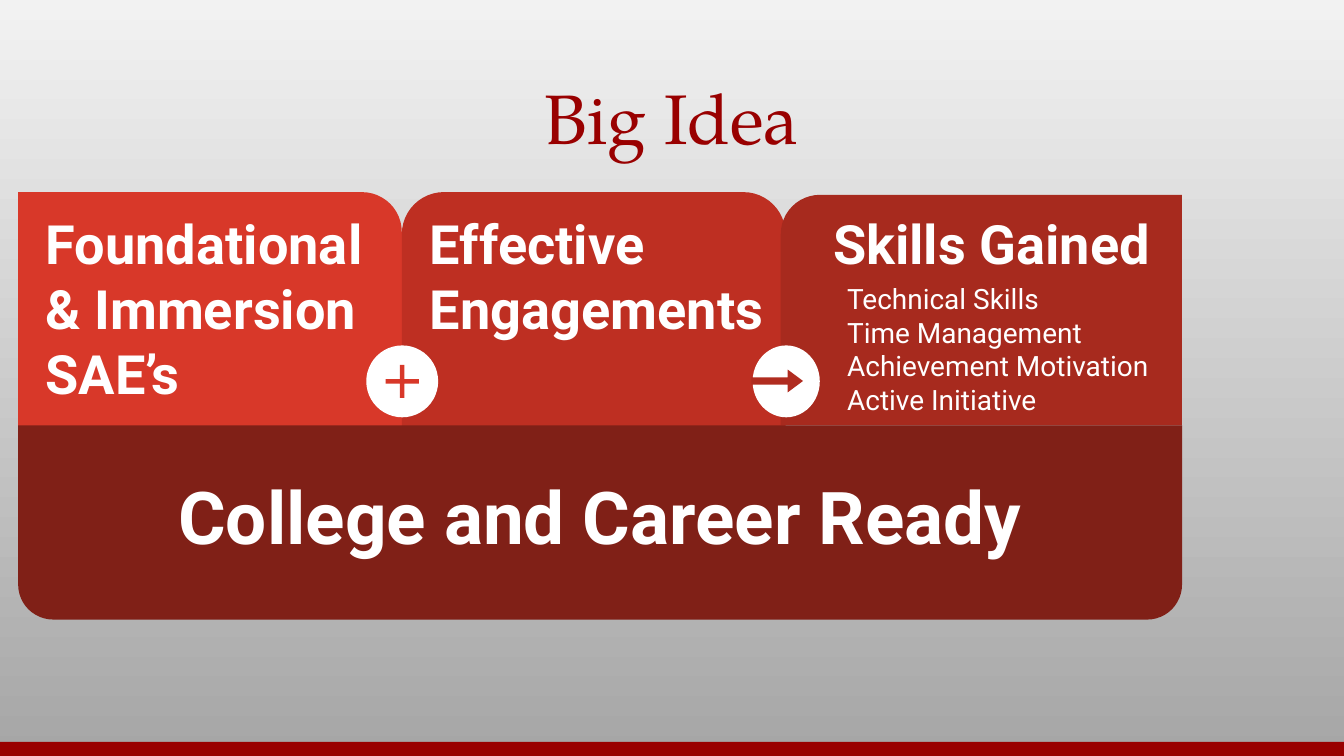
from typing import NamedTuple

from pptx import Presentation
from pptx import util as u
from pptx.dml.color import RGBColor
from pptx.enum import shapes, text

PX = 4572
WIDTH, HEIGHT = 2000, 1125
SANS, SERIF = "Roboto", "TeX Gyre Pagella"
WHITE = RGBColor(0xFF, 0xFF, 0xFF)
CRIMSON = RGBColor(0x99, 0x00, 0x00)
RED = RGBColor(0xD8, 0x38, 0x29)
BRICK = RGBColor(0xBE, 0x2F, 0x22)
RUST = RGBColor(0xA7, 0x2A, 0x1E)
ARROW = RGBColor(0xB0, 0x2C, 0x20)
MAROON = RGBColor(0x80, 0x20, 0x17)
SKY = RGBColor(0xF2, 0xF2, 0xF2)
GROUND = RGBColor(0xA6, 0xA6, 0xA6)
KIND = shapes.MSO_SHAPE


class Box(NamedTuple):
    x: int
    y: int
    w: int
    h: int


class Block(NamedTuple):
    kind: shapes.MSO_SHAPE
    box: Box
    fill: RGBColor
    adj: tuple[float, ...] = ()
    rotation: int = 0
    flip: bool = False


class Heading(NamedTuple):
    label: str
    box: Box


PANELS = [
    Block(KIND.RECTANGLE, Box(0, 1104, WIDTH, 21), CRIMSON),
    Block(KIND.ROUND_1_RECTANGLE, Box(27, 286, 571, 348), RED, (0.17,)),
    Block(KIND.ROUND_2_SAME_RECTANGLE, Box(598, 286, 571, 348), BRICK, (0.18, 0)),
    Block(KIND.ROUND_1_RECTANGLE, Box(1162, 290, 597, 343), RUST, (0.17,), flip=True),
    Block(KIND.ROUND_2_SAME_RECTANGLE, Box(27, 633, 1732, 289), MAROON, (0.18, 0), 180),
]
SYMBOLS = [
    Block(KIND.OVAL, Box(1120, 514, 100, 107), WHITE),
    Block(KIND.RIGHT_ARROW, Box(1118, 550, 77, 34), ARROW, (0.32, 0.67)),
    Block(KIND.OVAL, Box(545, 514, 107, 107), WHITE),
    Block(KIND.MATH_PLUS, Box(565, 534, 67, 67), RED, (0.1,)),
]
HEADINGS = [
    Heading("Foundational & Immersion SAE’s", Box(48, 293, 542, 416)),
    Heading("Effective Engagements", Box(620, 293, 542, 132)),
    Heading("Skills Gained", Box(1220, 293, 542, 132)),
]
SKILLS = ["Technical Skills", "Time Management", "Achievement Motivation", "Active Initiative"]


def emu(box: Box) -> list[int]:
    return [v * PX for v in box]


def draw_block(s, block: Block) -> None:
    sp = s.shapes.add_shape(block.kind, *emu(block.box))
    sp.shadow.inherit = False
    sp.fill.solid()
    sp.fill.fore_color.rgb = block.fill
    sp.line.fill.background()
    for i, value in enumerate(block.adj):
        sp.adjustments[i] = value
    sp.rotation = block.rotation
    if block.flip:
        sp._element.spPr.xfrm.set("flipH", "1")


def add_text(s, box: Box, lines: list[str], *, size: float, font: str = SANS,
             color: RGBColor = WHITE, bold: bool = False,
             align=text.PP_ALIGN.LEFT, anchor=text.MSO_ANCHOR.TOP) -> None:
    tf = s.shapes.add_textbox(*emu(box)).text_frame
    tf.word_wrap = True
    tf.vertical_anchor = anchor
    tf.margin_left = tf.margin_right = tf.margin_top = tf.margin_bottom = 20 * PX
    for i, line in enumerate(lines):
        p = tf.paragraphs[0] if i == 0 else tf.add_paragraph()
        p.alignment = align
        r = p.add_run()
        r.text = line
        r.font.name = font
        r.font.size = u.Pt(size)
        r.font.bold = bold
        r.font.color.rgb = color


def main() -> None:
    prs = Presentation()
    prs.slide_width, prs.slide_height = WIDTH * PX, HEIGHT * PX
    s = prs.slides.add_slide(prs.slide_layouts[6])

    fill = s.background.fill
    fill.gradient()
    fill.gradient_angle = 270
    for stop, color in zip(fill.gradient_stops, (SKY, GROUND)):
        stop.color.rgb = color

    for block in PANELS + SYMBOLS:
        draw_block(s, block)

    center = text.PP_ALIGN.CENTER
    add_text(s, Box(68, 74, 1864, 182), ["Big Idea"], size=37.5, font=SERIF,
             color=CRIMSON, align=center, anchor=text.MSO_ANCHOR.BOTTOM)
    for heading in HEADINGS:
        add_text(s, heading.box, [heading.label], size=29, bold=True)
    add_text(s, Box(1241, 399, 500, 222), SKILLS, size=15)
    add_text(s, Box(27, 682, 1732, 208), ["College and Career Ready"], size=39,
             bold=True, align=center)

    prs.save("out.pptx")


if __name__ == "__main__":
    main()
